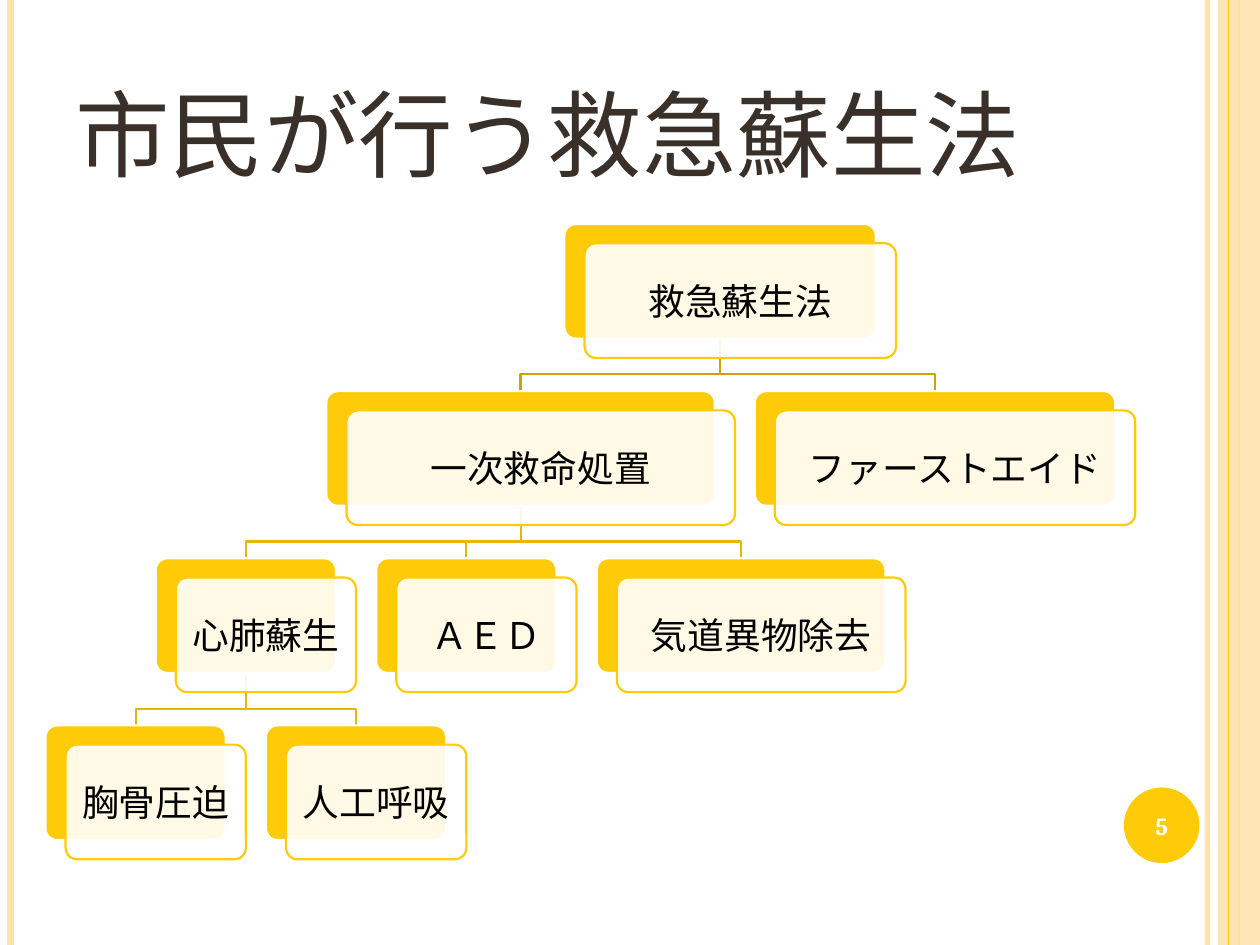
from lxml import etree
from pptx import Presentation
from pptx import util as u
from pptx.dml.color import RGBColor
from pptx.enum import shapes, text
from pptx.oxml.ns import qn

Pt = u.Pt
COLORS = {"gold": "FFCA08", "cream": "FFE1AB", "title": "39302A", "white": "FFFFFF",
          "black": "000000", "branch1": "CCA206", "branch2": "E7B707"}
FONT = "Cambria"

TOP, ROW_STEP, BOX_H = 128, 95.5, 65.5
SHIFT_X, SHIFT_Y = 11.5, 11
ELBOW_DROP = 20.5

# name: (level, center x, width, parent)
NODES = {
    "救急蘇生法": (0, 411.5, 178, None),
    "一次救命処置": (1, 297.5, 222, "救急蘇生法"),
    "ファーストエイド": (1, 534.25, 206, "救急蘇生法"),
    "心肺蘇生": (2, 140.5, 103, "一次救命処置"),
    "ＡＥＤ": (2, 266.5, 103, "一次救命処置"),
    "気道異物除去": (2, 423.5, 165, "一次救命処置"),
    "胸骨圧迫": (3, 77.5, 103, "心肺蘇生"),
    "人工呼吸": (3, 203.5, 103, "心肺蘇生"),
}
# x, color, width, opacity
STRIPES = [(690, "cream", 3, 93), (6, "cream", 4.5, None), (708, "gold", 1.5, None)]


class SlideBuilder:
    def __init__(self, slide):
        self.s = slide

    def color(self, fmt, name, opacity=None):
        """Set a solid fill, with opacity in percent where given."""
        fmt.solid()
        fmt.fore_color.rgb = RGBColor.from_string(COLORS[name])
        if opacity is not None:
            clr = fmt._xPr.find(qn("a:solidFill"))[0]
            etree.SubElement(clr, qn("a:alpha")).set("val", str(opacity * 1000))

    def stripe(self, x, color, width, opacity=None):
        c = self.s.shapes.add_connector(shapes.MSO_CONNECTOR.STRAIGHT,
                                        Pt(x), 0, Pt(x), Pt(540))
        self.color(c.line.fill, color, opacity)
        c.line.width = Pt(width)
        etree.SubElement(c._element.spPr, qn("a:effectLst"))

    def shape(self, kind, x, y, w, h, fill, opacity=None, line=None):
        sp = self.s.shapes.add_shape(kind, Pt(x), Pt(y), Pt(w), Pt(h))
        sp.shadow.inherit = False
        self.color(sp.fill, fill, opacity)
        if line:
            self.color(sp.line.fill, line)
            sp.line.width = Pt(1.25)
        else:
            sp.line.fill.background()
        return sp

    def label(self, sp, words, size, color, inset, bold=False,
              align=text.PP_ALIGN.CENTER, anchor=text.MSO_ANCHOR.MIDDLE):
        tf = sp.text_frame
        tf.text = words
        tf.word_wrap = True
        tf.vertical_anchor = anchor
        tf.margin_left = tf.margin_right = Pt(inset)
        p = tf.paragraphs[0]
        p.alignment = align
        r = p.runs[0]
        r.font.name, r.font.size, r.font.bold = FONT, Pt(size), bold
        r.font.color.rgb = RGBColor.from_string(COLORS[color])

    def title(self, words):
        sp = self.s.shapes.add_textbox(Pt(36), Pt(21.6), Pt(596), Pt(90))
        self.label(sp, words, 54, "title", 7.2,
                   align=text.PP_ALIGN.LEFT, anchor=text.MSO_ANCHOR.BOTTOM)

    def elbow(self, x1, y1, x2, y2, color):
        mid = y1 + ELBOW_DROP
        fb = self.s.shapes.build_freeform(Pt(x1), Pt(y1))
        fb.add_line_segments([(Pt(x), Pt(y)) for x, y in
                              [(x1, mid), (x2, mid), (x2, y2)]], close=False)
        sp = fb.convert_to_shape()
        sp.shadow.inherit = False
        sp.fill.background()
        self.color(sp.line.fill, color)
        sp.line.width = Pt(1.25)

    def node(self, words, center, y, w):
        """Draw a gold card with a translucent labelled card shifted in front."""
        kind = shapes.MSO_SHAPE.ROUNDED_RECTANGLE
        x = center - w / 2
        back = self.shape(kind, x, y, w, BOX_H, "gold", line="white")
        front = self.shape(kind, x + SHIFT_X, y + SHIFT_Y, w, BOX_H, "white", 90, "gold")
        for sp in (back, front):
            sp.adjustments[0] = 0.1
        self.label(front, words, 21, "black", 4)


def row_top(level):
    return TOP + level * ROW_STEP


def main():
    prs = Presentation()
    prs.slide_width, prs.slide_height = Pt(720), Pt(540)
    b = SlideBuilder(prs.slides.add_slide(prs.slide_layouts[6]))

    for stripe in STRIPES:
        b.stripe(*stripe)
    b.shape(shapes.MSO_SHAPE.RECTANGLE, 696, 0, 24, 540, "cream", 87)
    b.stripe(702, "gold", 0.75)
    badge = b.shape(shapes.MSO_SHAPE.OVAL, 642.25, 450, 43.2, 43.2, "gold")
    b.label(badge, "5", 14, "white", 0, bold=True)
    b.title("市民が行う救急蘇生法")

    for level, center, _, parent in NODES.values():
        if parent:
            b.elbow(NODES[parent][1], row_top(level - 1) + BOX_H, center, row_top(level),
                    "branch1" if level == 1 else "branch2")
    for name, (level, center, width, _) in NODES.items():
        b.node(name, center, row_top(level), width)

    prs.save("out.pptx")


if __name__ == "__main__":
    main()
